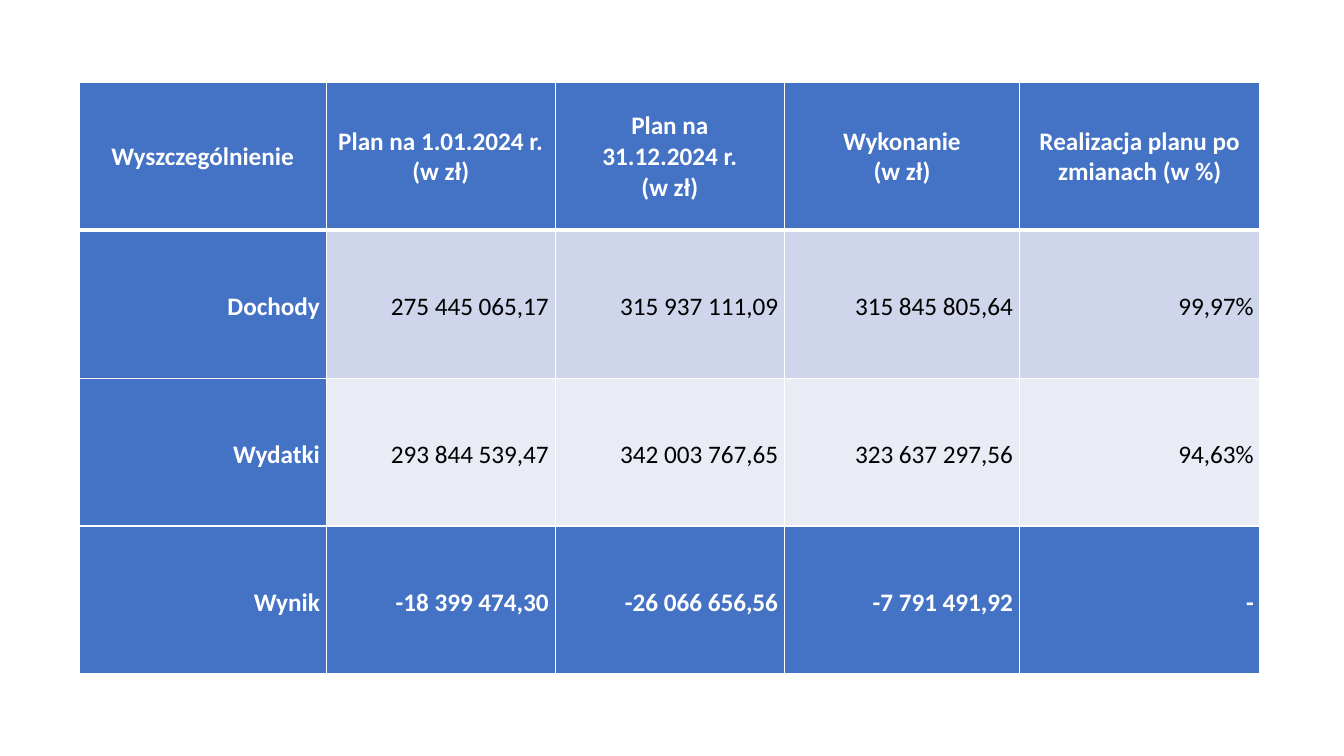
from lxml.etree import SubElement
from pptx import Presentation
from pptx.dml.color import RGBColor
from pptx.enum.text import MSO_ANCHOR as Anchor, PP_ALIGN as Align
from pptx.oxml.ns import qn
from pptx.util import Pt

# Content
HEADERS = ["Wyszczególnienie", "Plan na 1.01.2024 r.\v(w zł)",
           "Plan na\v31.12.2024 r.\v(w zł)", "Wykonanie\v(w zł)",
           "Realizacja planu po zmianach (w %)"]
ROWS = [
    ["Dochody", "275 445 065,17", "315 937 111,09", "315 845 805,64", "99,97%"],
    ["Wydatki", "293 844 539,47", "342 003 767,65", "323 637 297,56", "94,63%"],
    ["Wynik", "-18 399 474,30", "-26 066 656,56", "-7 791 491,92", "-"],
]
COLORS = {"accent": "4472C4", "income": "CFD5EA", "spending": "E9EBF5",
          "white": "FFFFFF", "black": "000000"}
ROW_FILLS = ["accent", "income", "spending", "accent"]

# Layout in points
LEFT, TOP = 56.4, 58.9
COL_WIDTHS = [176.6, 163.6, 163.8, 167.8, 171.9]
ROW_HEIGHT = 105.6
CELL_FORMAT = {"margin_left": Pt(4.5), "margin_right": Pt(4.5), "margin_top": Pt(0.7),
               "margin_bottom": Pt(0), "vertical_anchor": Anchor.MIDDLE}


def set_borders(cell, widths):
    """Draw white cell borders; widths holds points for each side tag."""
    tc_pr = cell._tc.get_or_add_tcPr()
    for i, (tag, width) in enumerate(widths.items()):
        ln = SubElement(tc_pr, qn(f"a:{tag}"), w=str(Pt(width)))
        fill = SubElement(ln, qn("a:solidFill"))
        SubElement(fill, qn("a:srgbClr"), val=COLORS["white"])
        tc_pr.insert(i, ln)


def fill_cell(cell, text, row, col):
    is_header = row == 0
    fill_name = "accent" if col == 0 else ROW_FILLS[row]
    strong = fill_name == "accent"
    for name, value in CELL_FORMAT.items():
        setattr(cell, name, value)
    set_borders(cell, {"lnL": 1, "lnR": 1, "lnT": 3 if row == 1 else 1,
                       "lnB": 3 if is_header else 1})
    cell.fill.solid()
    cell.fill.fore_color.rgb = RGBColor.from_string(COLORS[fill_name])

    p = cell.text_frame.paragraphs[0]
    p.text = text
    p.alignment = Align.CENTER if is_header else Align.RIGHT
    p.line_spacing = 1.0 if is_header else 1.15
    p.space_after = Pt(8)
    for r in p.runs:
        for name, value in {"name": "Calibri", "size": Pt(18), "bold": strong}.items():
            setattr(r.font, name, value)
        r.font.color.rgb = RGBColor.from_string(COLORS["white" if strong else "black"])


prs = Presentation()
prs.slide_width, prs.slide_height = Pt(960), Pt(540)
s = prs.slides.add_slide(prs.slide_layouts[6])

# Budget table
data = [HEADERS] + ROWS
table = s.shapes.add_table(len(data), len(HEADERS), Pt(LEFT), Pt(TOP),
                           Pt(sum(COL_WIDTHS)), Pt(ROW_HEIGHT * len(data))).table
table.first_col = True
table.last_row = True
for column, width in zip(table.columns, COL_WIDTHS):
    column.width = Pt(width)
for i, values in enumerate(data):
    table.rows[i].height = Pt(ROW_HEIGHT)
    for j, text in enumerate(values):
        fill_cell(table.cell(i, j), text, i, j)

prs.save("out.pptx")
